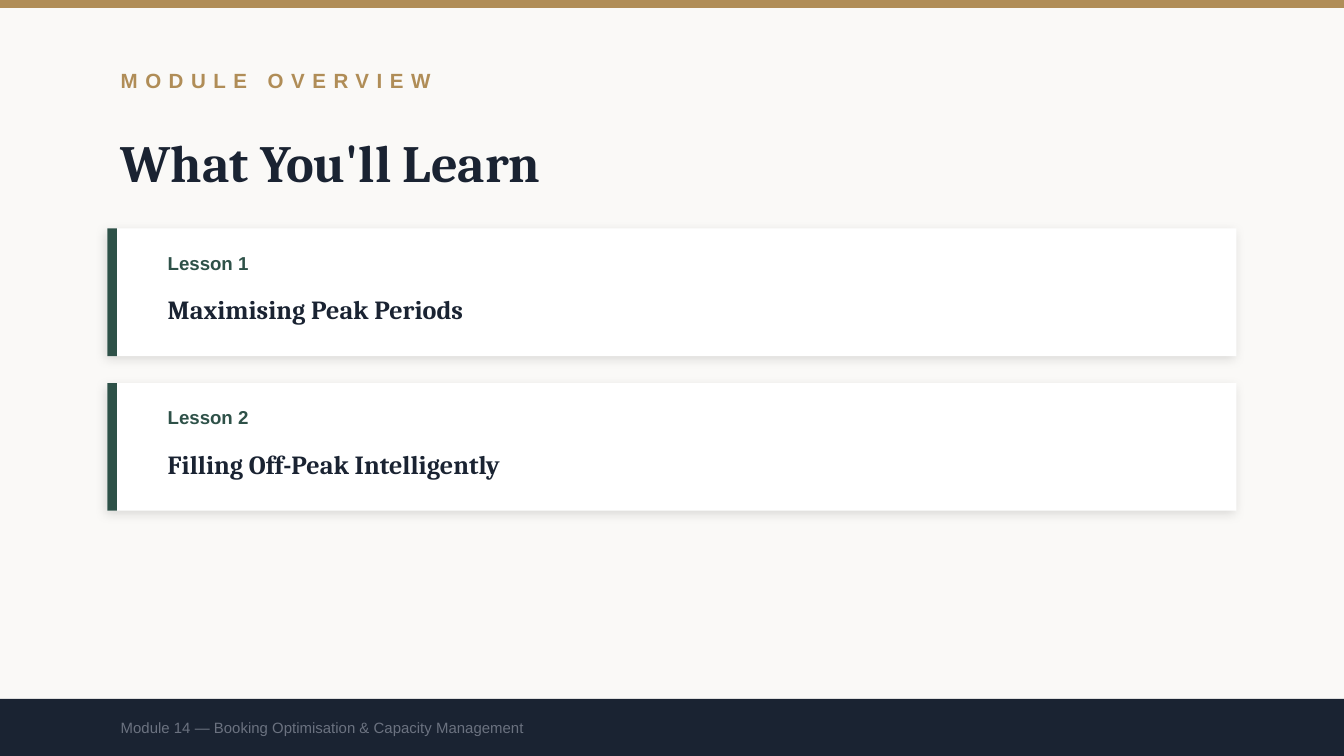
import pptx
import pptx.dml.color
import pptx.enum.text
import pptx.oxml
import pptx.oxml.ns
import pptx.util
from pptx.enum.shapes import MSO_SHAPE

PX = 914400 // 200
COLORS = {
    "paper": "FAF9F7",
    "gold": "B08D57",
    "navy": "1A2332",
    "green": "2E5148",
    "white": "FFFFFF",
    "gray": "6B7280",
    "shadow": "000000",
}
LESSONS = ["Maximising Peak Periods", "Filling Off-Peak Intelligently"]
CARD_TOP, CARD_PITCH, CARD_HEIGHT = 340, 230, 190


def rgb(name):
    return pptx.dml.color.RGBColor.from_string(COLORS[name])


def px(*lengths):
    return [pptx.util.Emu(n * PX) for n in lengths]


def add_rect(s, box, color):
    sp = s.shapes.add_shape(MSO_SHAPE.RECTANGLE, *px(*box))
    sp.shadow.inherit = False
    sp.fill.solid()
    sp.fill.fore_color.rgb = rgb(color)
    sp.line.fill.background()
    return sp


def add_shadow(sp):
    effects = sp._element.spPr.find(pptx.oxml.ns.qn("a:effectLst"))
    effects.append(pptx.oxml.parse_xml(
        f'<a:outerShdw {pptx.oxml.ns.nsdecls("a")} blurRad="{pptx.util.Pt(6)}" '
        f'dist="{pptx.util.Pt(2)}" dir="{135 * 60000}" algn="bl" rotWithShape="0">'
        f'<a:srgbClr val="{COLORS["shadow"]}"><a:alpha val="12000"/></a:srgbClr>'
        '</a:outerShdw>'))


def format_text(sp, text, font, size, color, bold=True, spacing=0):
    tf = sp.text_frame
    tf.text = text
    tf.word_wrap = True
    tf.auto_size = pptx.enum.text.MSO_AUTO_SIZE.NONE
    tf.vertical_anchor = pptx.enum.text.MSO_ANCHOR.MIDDLE
    p = tf.paragraphs[0]
    p.alignment = pptx.enum.text.PP_ALIGN.LEFT
    r = p.runs[0]
    r.font.name = font
    r.font.size = pptx.util.Pt(size)
    r.font.bold = bold
    r.font.color.rgb = rgb(color)
    if spacing:
        r.font._element.set("spc", str(spacing * 100))


def add_text(s, box, *args, **kwargs):
    format_text(s.shapes.add_textbox(*px(*box)), *args, **kwargs)


def set_title(s, box, text):
    sp = s.shapes.title
    sp.left, sp.top, sp.width, sp.height = px(*box)
    format_text(sp, text, "Cambria", 28, "navy")


def add_card(s, top, number, name):
    add_shadow(add_rect(s, (160, top, 1680, CARD_HEIGHT), "white"))
    add_rect(s, (160, top, 14, CARD_HEIGHT), "green")
    add_text(s, (230, top + 16, 1400, 70), f"Lesson {number}", "Arial", 10, "green")
    add_text(s, (230, top + 80, 1560, 80), name, "Cambria", 14, "navy")


def main():
    prs = pptx.Presentation()
    prs.slide_width, prs.slide_height = px(2000, 1125)
    s = prs.slides.add_slide(prs.slide_layouts[5])
    s.background.fill.solid()
    s.background.fill.fore_color.rgb = rgb("paper")

    add_rect(s, (0, 0, 2000, 12), "gold")
    add_text(s, (160, 80, 1600, 80), "MODULE OVERVIEW", "Arial", 11, "gold", spacing=4)
    set_title(s, (160, 180, 1600, 120), "What You'll Learn")
    for i, name in enumerate(LESSONS):
        add_card(s, CARD_TOP + i * CARD_PITCH, i + 1, name)
    add_rect(s, (0, 1040, 2000, 85), "navy")
    add_text(s, (160, 1040, 1600, 85),
             "Module 14 — Booking Optimisation & Capacity Management",
             "Arial", 8, "gray", bold=False)
    prs.save("out.pptx")


if __name__ == "__main__":
    main()
